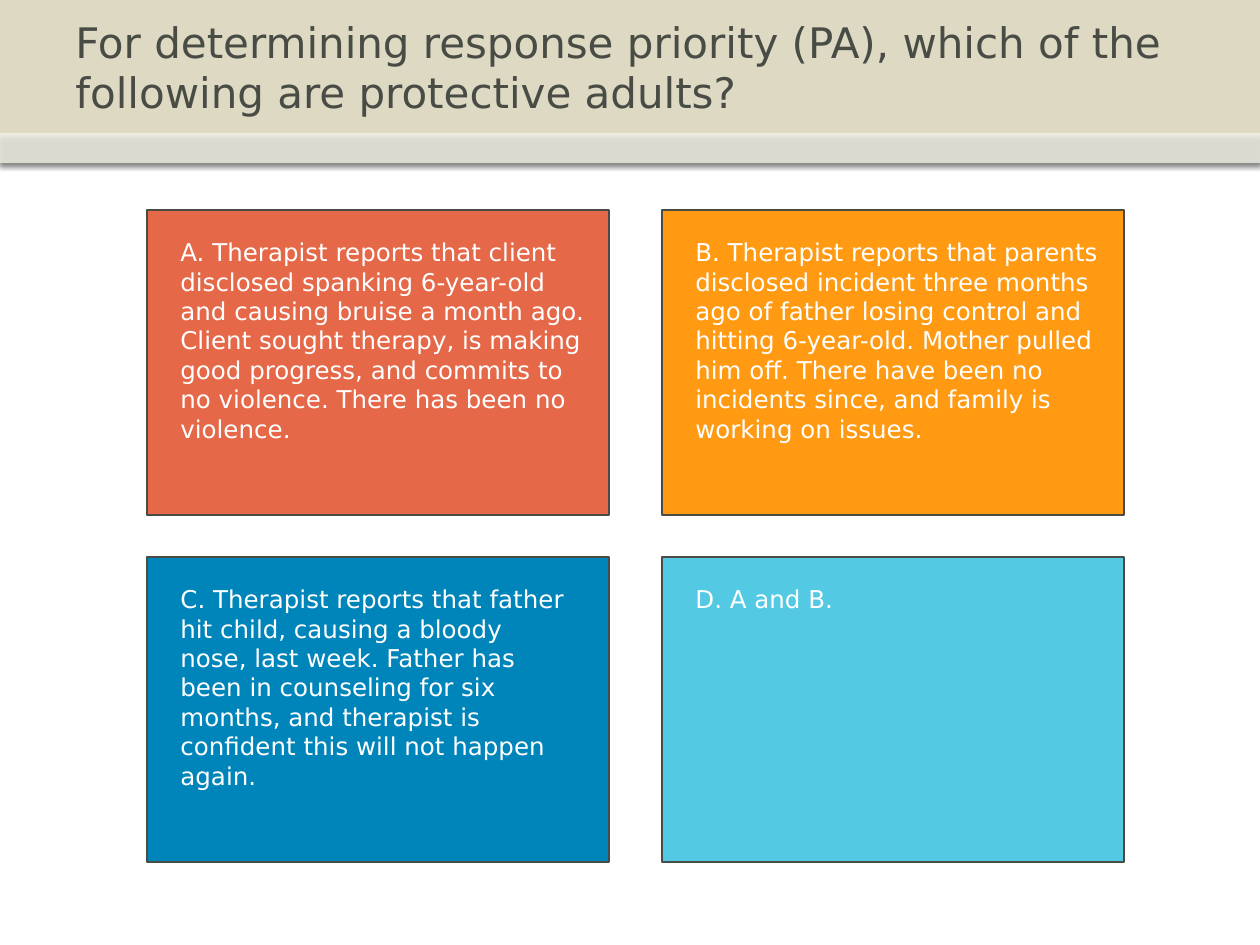
from lxml import etree
from pptx import Presentation, util as u
from pptx.dml.color import RGBColor
from pptx.enum import shapes, text
from pptx.oxml import ns

FONT = "DejaVu Sans"
WHITE = RGBColor(0xFF, 0xFF, 0xFF)
SAND = RGBColor(0xDD, 0xD9, 0xC3)
DARK = RGBColor(0x48, 0x4C, 0x45)
RED = RGBColor(0xE5, 0x68, 0x49)
ORANGE = RGBColor(0xFF, 0x9A, 0x12)
BLUE = RGBColor(0x00, 0x85, 0xBA)
CYAN = RGBColor(0x53, 0xC9, 0xE4)


def box(*px):
    return [u.Emu(round(v * 914400 / 126)) for v in px]


def add_text(s, bounds, words, size, color, anchor):
    tf = s.shapes.add_textbox(*box(*bounds)).text_frame
    tf.word_wrap = True
    tf.vertical_anchor = anchor
    r = tf.paragraphs[0].add_run()
    r.text = words
    r.font.name, r.font.size = FONT, u.Pt(size)
    r.font.color.rgb = color


prs = Presentation()
prs.slide_width, prs.slide_height = box(1260, 945)
s = prs.slides.add_slide(prs.slide_layouts[6])

# Header: sand band with a translucent strip along its foot, both shadowed
for top, height, color, opacity in [(0, 163, SAND, 100), (133, 30, WHITE, 53)]:
    sp = s.shapes.add_shape(shapes.MSO_SHAPE.RECTANGLE, *box(0, top, 1260, height))
    sp.fill.solid()
    sp.fill.fore_color.rgb = color
    sp.line.fill.background()
    sp.shadow.inherit = False
    shadow = etree.SubElement(
        sp._element.spPr.find(ns.qn("a:effectLst")), ns.qn("a:outerShdw"),
        blurRad=str(u.Pt(3.1)), dist=str(u.Pt(1.8)), dir="5400000", rotWithShape="0")
    black = etree.SubElement(shadow, ns.qn("a:srgbClr"), val="000000")
    etree.SubElement(black, ns.qn("a:alpha"), val="35000")
    if opacity < 100:
        fill = sp._element.spPr.find(ns.qn("a:solidFill"))
        etree.SubElement(fill[0], ns.qn("a:alpha"), val=str(opacity * 1000))

# Title
add_text(s, (63, 0, 1134, 133),
         "For determining response priority (PA), which of the following are protective adults?",
         24, DARK, text.MSO_ANCHOR.MIDDLE)

# Answer cards in a two by two grid: colour, text width, wording
answers = [
    (RED, 441, "A. Therapist reports that client disclosed spanking 6-year-old and causing "
     "bruise a month ago. Client sought therapy, is making good progress, and commits to "
     "no violence. There has been no violence."),
    (ORANGE, 431, "B. Therapist reports that parents disclosed incident three months ago of "
     "father losing control and hitting 6-year-old. Mother pulled him off. There have been "
     "no incidents since, and family is working on issues."),
    (BLUE, 410, "C. Therapist reports that father hit child, causing a bloody nose, last week. "
     "Father has been in counseling for six months, and therapist is confident this will "
     "not happen again."),
    (CYAN, 420, "D. A and B."),
]
for i, (color, width, words) in enumerate(answers):
    row, col = divmod(i, 2)
    left, top = 147 + 515 * col, 210 + 347 * row
    sp = s.shapes.add_shape(shapes.MSO_SHAPE.RECTANGLE, *box(left, top, 462, 305))
    sp.shadow.inherit = False
    sp.fill.solid()
    sp.fill.fore_color.rgb = color
    sp.line.color.rgb = DARK
    sp.line.width = u.Pt(0.75)
    add_text(s, (left + 21, top + 21, width, 220), words, 14, WHITE, text.MSO_ANCHOR.TOP)

prs.save("out.pptx")
